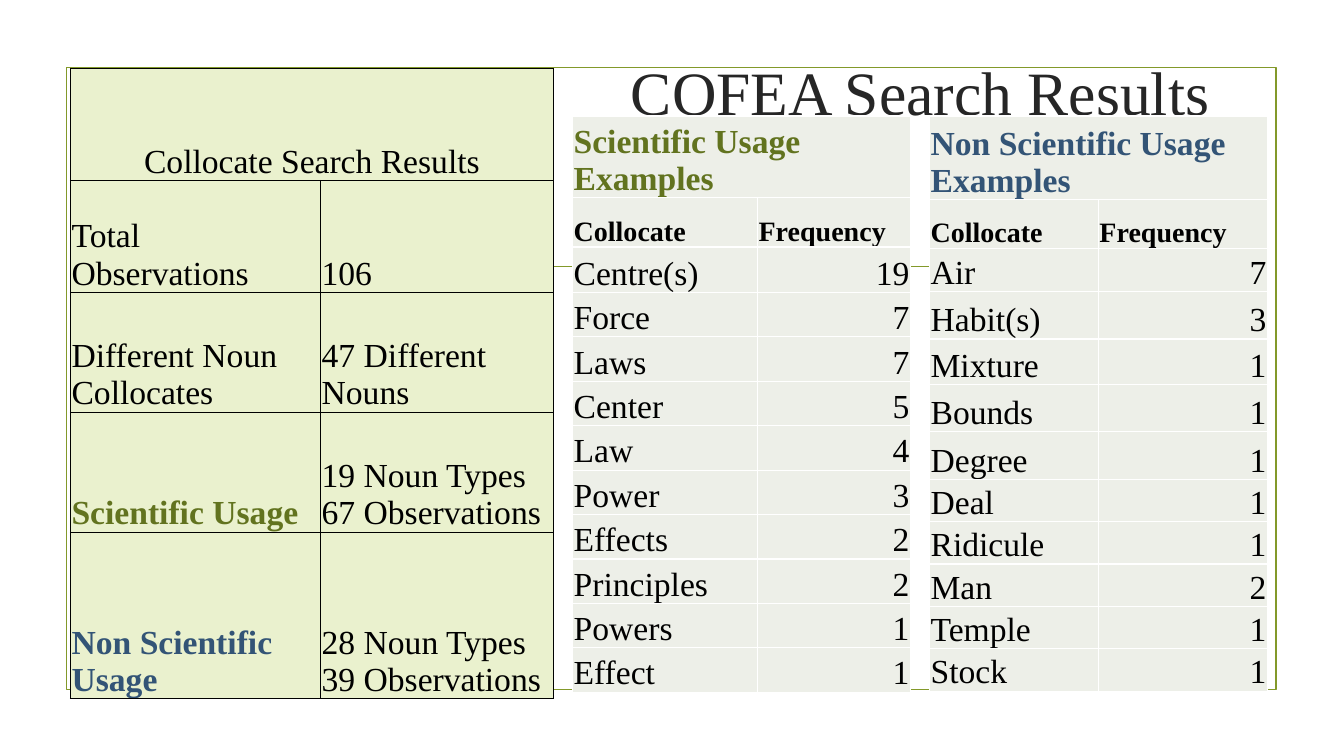
from lxml import etree
from pptx import Presentation
from pptx import util as u
from pptx.dml.color import RGBColor
from pptx.enum import shapes, text
from pptx.oxml.ns import qn

WIDE, HIGH = 13.33, 7.5
FONT = "Times New Roman"
OLIVE, GREEN, BLUE, BLACK = "83992A", "62731F", "335476", "000000"
LEFT, MID, RIGHT = text.PP_ALIGN.LEFT, text.PP_ALIGN.CENTER, text.PP_ALIGN.RIGHT


def color(code):
    return RGBColor.from_string(code)


def inches(*sizes):
    return [u.Inches(size) for size in sizes]


def write(frame, words, size=24, ink=BLACK, bold=False, align=LEFT):
    frame.word_wrap = True
    para = frame.paragraphs[0]
    para.alignment = align
    run = para.add_run()
    run.text = words
    font = run.font
    font.name, font.size, font.bold = FONT, u.Pt(size), bold
    font.color.rgb = color(ink)


def edge(cell, ink):
    props = cell._tc.get_or_add_tcPr()
    for side in ("lnL", "lnR", "lnT", "lnB"):
        line = etree.SubElement(props, qn("a:" + side), w=str(u.Pt(1)))
        fill = etree.SubElement(line, qn("a:solidFill"))
        etree.SubElement(fill, qn("a:srgbClr"), val=ink)


def grid(slide, box, cols, rows, cells, fill, ink):
    x, y, w, h = box
    frame = slide.shapes.add_table(len(rows), len(cols), *inches(x, y, w, h))
    table = frame.table
    for col, part in zip(table.columns, cols):
        col.width = u.Inches(w * part / sum(cols))
    for row, part in zip(table.rows, rows):
        row.height = u.Inches(h * part / sum(rows))
    for r, line in enumerate(cells):
        for c in range(len(cols)):
            cell = table.cell(r, c)
            edge(cell, ink)
            cell.fill.solid()
            cell.fill.fore_color.rgb = color(fill)
            cell.margin_left = cell.margin_right = cell.margin_top = u.Inches(0.01)
            cell.margin_bottom = 0
            cell.vertical_anchor = text.MSO_ANCHOR.BOTTOM
            if c < len(line):
                words, style = line[c]
                write(cell.text_frame, words, **style)
    table.cell(0, 0).merge(table.cell(0, len(cols) - 1))


def frame(slide, box):
    x, y, w, h = box
    rect = slide.shapes.add_shape(shapes.MSO_SHAPE.RECTANGLE, *inches(x, y, w, h))
    rect.shadow.inherit = False
    rect.fill.background()
    inset, level = 0.0725 * w, y + 0.32 * h
    rule = slide.shapes.add_connector(
        shapes.MSO_CONNECTOR.STRAIGHT, *inches(x + inset, level, x + w - inset, level))
    etree.SubElement(rule._element.spPr, qn("a:effectLst"))
    for part in (rect, rule):
        part.line.color.rgb = color(OLIVE)
        part.line.width = u.Pt(1.25)


def title(slide, box, words):
    area = slide.shapes.add_textbox(*inches(*box)).text_frame
    area.vertical_anchor = text.MSO_ANCHOR.MIDDLE
    write(area, words, size=44, ink="262626", align=MID)


def summary(slide, box):
    facts = [
        ("Total Observations", "106", {}),
        ("Different Noun Collocates", "47 Different Nouns", {}),
        ("Scientific Usage", "19 Noun Types 67 Observations", dict(ink=GREEN, bold=True)),
        ("Non Scientific Usage", "28 Noun Types 39 Observations", dict(ink=BLUE, bold=True)),
    ]
    cells = [[("Collocate Search Results", dict(align=MID))]]
    cells += [[(name, style), (value, {})] for name, value, style in facts]
    grid(slide, box, (2.48, 2.31), (1.11, 1.11, 1.19, 1.19, 1.65), cells, "EAF1CE", BLACK)


def usage(slide, box, head, ink, cols, rows, counts):
    label = dict(size=20, bold=True)
    cells = [[(head, dict(ink=ink, bold=True))],
             [("Collocate", label), ("Frequency", label)]]
    cells += [[(noun, {}), (str(count), dict(align=RIGHT))] for noun, count in counts]
    grid(slide, box, cols, rows, cells, "EDEFE8", "FFFFFF")


def main():
    deck = Presentation()
    deck.slide_width, deck.slide_height = inches(WIDE, HIGH)
    slide = deck.slides.add_slide(deck.slide_layouts[6])
    frame(slide, (0.66, 0.67, 12, 6.17))
    title(slide, (3.88, 0.19, 10.5, 1.43), "COFEA Search Results")
    summary(slide, (0.7, 0.68, 4.79, 6.25))
    top, wide, high = 1.15, 3.35, 5.71
    usage(slide, (5.68, top, wide, high), "Scientific Usage Examples", GREEN,
          (1.84, 1.52), [0.8, 0.49, 0.45] + [0.44] * 9,
          [("Centre(s)", 19), ("Force", 7), ("Laws", 7), ("Center", 5), ("Law", 4),
           ("Power", 3), ("Effects", 2), ("Principles", 2), ("Powers", 1), ("Effect", 1)])
    usage(slide, (9.22, top, wide, high), "Non Scientific Usage Examples", BLUE,
          (1, 1), [0.83, 0.48, 0.43, 0.47, 0.45, 0.47, 0.47] + [0.42] * 5,
          [("Air", 7), ("Habit(s)", 3), ("Mixture", 1), ("Bounds", 1), ("Degree", 1),
           ("Deal", 1), ("Ridicule", 1), ("Man", 2), ("Temple", 1), ("Stock", 1)])
    deck.save("out.pptx")


if __name__ == "__main__":
    main()
